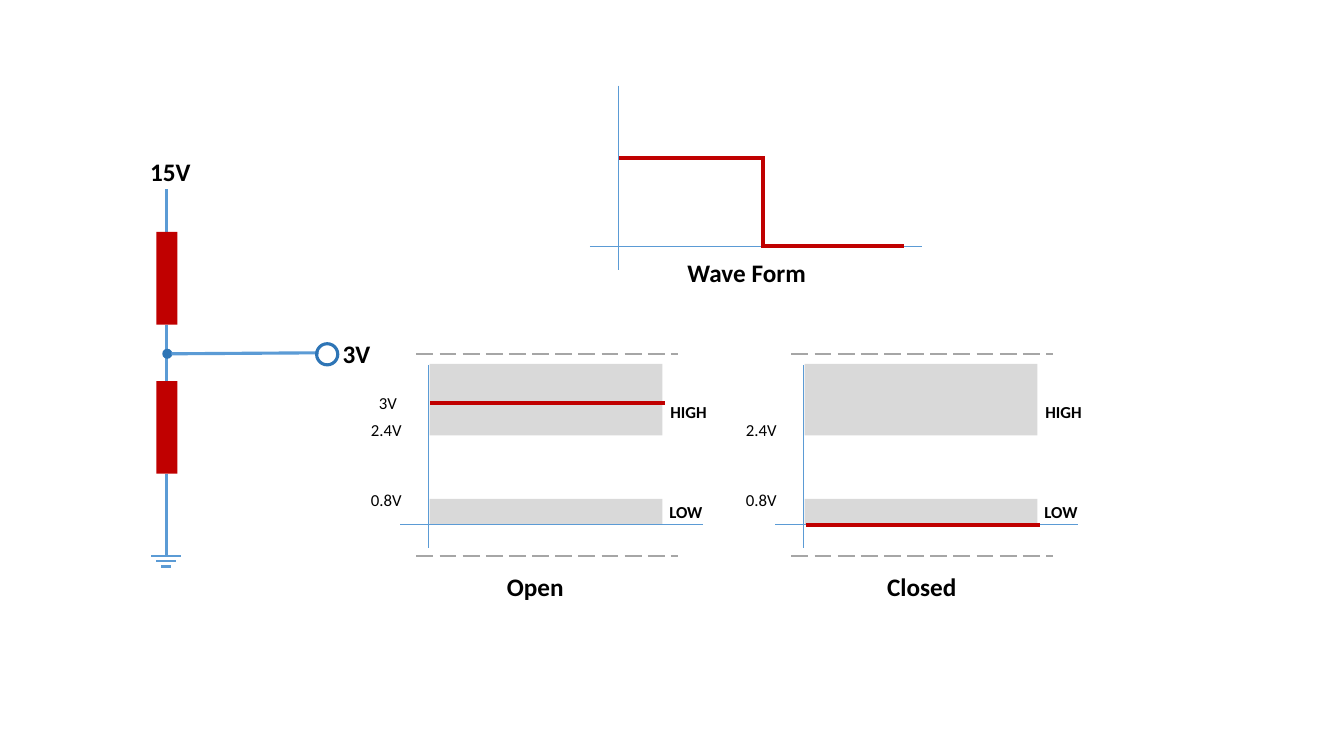
from lxml import etree
from pptx import Presentation
from pptx.dml.color import RGBColor
from pptx.enum import dml, shapes
from pptx.oxml.ns import qn
from pptx.util import Inches, Pt

COLORS = {"wire": "5B9BD5", "node": "2E75B6", "signal": "C00000",
          "band": "D9D9D9", "limit": "A6A6A6", "text": "000000"}
RECTANGLE = shapes.MSO_SHAPE.RECTANGLE
OVAL = shapes.MSO_SHAPE.OVAL


def color(name):
    return RGBColor.from_string(COLORS[name])


def add_line(slide, start, end, name="wire", width=0.5, dash=None):
    line = slide.shapes.add_connector(
        shapes.MSO_CONNECTOR.STRAIGHT, *map(Inches, (*start, *end)))
    line.line.color.rgb = color(name)
    line.line.width = Pt(width)
    if dash:
        line.line.dash_style = dash
    etree.SubElement(line._element.spPr, qn("a:effectLst"))


def add_figure(slide, kind, box, fill=None, outline=None):
    figure = slide.shapes.add_shape(kind, *map(Inches, box))
    figure.shadow.inherit = False
    if fill:
        figure.fill.solid()
        figure.fill.fore_color.rgb = color(fill)
    else:
        figure.fill.background()
    if outline:
        figure.line.color.rgb = color(outline)
        figure.line.width = Pt(2.25)
    else:
        figure.line.fill.background()


def add_label(slide, words, box, size=18, bold=True):
    label = slide.shapes.add_textbox(*map(Inches, box))
    label.text_frame.word_wrap = True
    para = label.text_frame.paragraphs[0]
    para.text = words
    para.font.name = "Calibri"
    para.font.size = Pt(size)
    para.font.bold = bold
    para.font.color.rgb = color("text")


def draw_divider(slide, left, top):
    """Draw the voltage divider from its supply label down to ground."""
    wire = left + 0.26
    node = top + 2.01
    add_label(slide, "15V", (left, top, 1.46, 0.4))
    for start, end in ((0.38, 0.8), (1.72, 2.28), (3.2, 4.02)):
        add_line(slide, (wire, top + start), (wire, top + end), width=2.25)
    for offset in (0.8, 2.28):
        add_figure(slide, RECTANGLE,
                   (wire - 0.1, top + offset, 0.21, 0.92), "signal")
    for step, half in enumerate((0.15, 0.1, 0.05)):
        level = top + 4.02 + step * 0.05
        add_line(slide, (wire - half, level), (wire + half, level), width=1.5)
    add_figure(slide, OVAL, (wire - 0.04, node - 0.05, 0.1, 0.1), "node")
    add_line(slide, (wire + 0.05, node), (wire + 1.51, node - 0.01), width=2.25)
    add_figure(slide, OVAL, (wire + 1.49, node - 0.1, 0.21, 0.21),
               outline="node")
    add_label(slide, "3V", (wire + 1.65, node - 0.2, 0.57, 0.4))


def draw_levels(slide, left, top, title, title_offset, signal, extra=()):
    """Draw the HIGH and LOW bands with the signal at a given depth."""
    axis = left + 0.67
    for depth in (0, 2.01):
        add_line(slide, (left + 0.55, top + depth), (left + 3.14, top + depth),
                 "limit", 1.5, dml.MSO_LINE.LONG_DASH)
    for depth, height in ((0.1, 0.71), (1.44, 0.25)):
        add_figure(slide, RECTANGLE,
                   (axis + 0.01, top + depth, 2.31, height), "band")
    add_line(slide, (axis, top + 0.11), (axis, top + 1.93))
    add_line(slide, (left + 0.39, top + 1.69), (left + 3.39, top + 1.69))
    add_line(slide, (axis + 0.02, top + signal), (axis + 2.35, top + signal),
             "signal", 3)
    for words, offset, depth in (("2.4V", 0, 0.6), ("0.8V", 0, 1.3), *extra):
        add_label(slide, words, (left + offset, top + depth, 0.77, 0.41),
                  12, False)
    for words, offset, depth in (("HIGH", 2.97, 0.43), ("LOW", 2.96, 1.42)):
        add_label(slide, words, (left + offset, top + depth, 0.8, 0.3), 12)
    add_label(slide, title, (left + title_offset, top + 2.11, 0.97, 0.4))


def draw_waveform(slide, left, top):
    axis = left + 0.28
    high, low = top + 0.72, top + 1.59
    fall = left + 1.72
    add_line(slide, (axis, top), (axis, top + 1.83))
    add_line(slide, (left, low), (left + 3.29, low))
    for start, end in (((axis + 0.01, high), (fall - 0.01, high)),
                       ((fall - 0.02, low), (left + 3.12, low)),
                       ((fall, high - 0.02), (fall, low - 0.02))):
        add_line(slide, start, end, "signal", 3)
    add_label(slide, "Wave Form", (left + 0.87, top + 1.65, 1.45, 0.4))


def main():
    deck = Presentation()
    deck.slide_width, deck.slide_height = Inches(13.33), Inches(7.5)
    slide = deck.slides.add_slide(deck.slide_layouts[6])
    draw_divider(slide, 1.39, 1.5)
    draw_levels(slide, 3.58, 3.51, "Open", 1.35, 0.49, [("3V", 0.08, 0.34)])
    draw_levels(slide, 7.3, 3.51, "Closed", 1.4, 1.7)
    draw_waveform(slide, 5.85, 0.85)
    deck.save("out.pptx")


if __name__ == "__main__":
    main()
